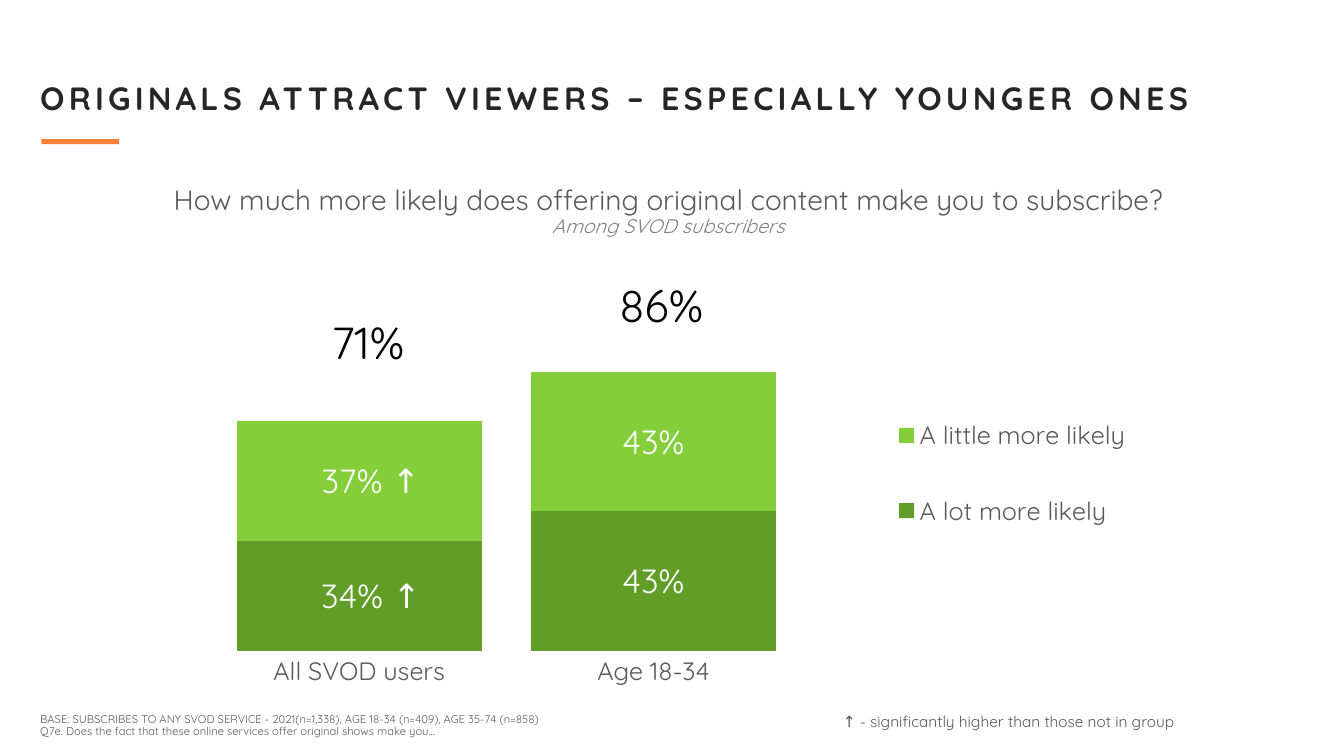
from dataclasses import dataclass, field
from typing import Any

from lxml import etree
from pptx import Presentation
from pptx import util as u
from pptx.chart import data as chart_data
from pptx.dml import color
from pptx.enum import chart as ch
from pptx.enum import shapes, text
from pptx.oxml import ns


@dataclass(frozen=True)
class Theme:
    font: str = "Quicksand"
    accent: str = "FF8139"
    heading: str = "262626"
    body: str = "595959"
    muted: str = "808080"
    total: str = "000000"
    label: str = "FFFFFF"
    lot: str = "629E27"
    little: str = "83CE39"
    title_size: float = 23
    question_size: float = 20
    base_size: float = 14
    total_size: float = 32
    label_size: float = 24
    axis_size: float = 18
    note_size: float = 11
    footer_size: float = 8


@dataclass(frozen=True)
class Cell:
    col: float
    row: float
    cols: float
    rows: float


@dataclass(frozen=True)
class Line:
    words: str
    size: float
    rgb: str
    fmt: dict[str, Any] = field(default_factory=dict)
    tracking: int = 0


@dataclass(frozen=True)
class Block:
    cell: Cell
    lines: list[Line]
    align: text.PP_ALIGN = text.PP_ALIGN.LEFT
    anchor: text.MSO_ANCHOR = text.MSO_ANCHOR.TOP
    spacing: float = 1.0


@dataclass(frozen=True)
class Answer:
    name: str
    values: tuple[float, ...]
    rgb: str
    label_shift: float


THEME = Theme()
GRID = 100
WIDTH, HEIGHT = u.Inches(13.33), u.Inches(7.5)
CENTER, RIGHT = text.PP_ALIGN.CENTER, text.PP_ALIGN.RIGHT
BOTTOM, MIDDLE = text.MSO_ANCHOR.BOTTOM, text.MSO_ANCHOR.MIDDLE

ACCENT_CELL = Cell(3.08, 18.4, 5.78, 0.67)
CHART_CELL = Cell(5.7, 36.8, 87.02, 54)
PLOT_SHARE = {"x": 0.116, "y": 0.119, "w": 0.503, "h": 0.8}
LEGEND_SHARE = {"x": 0.69, "y": 0.24, "w": 0.22, "h": 0.48}
GROUPS = ["All SVOD users", "Age 18-34"]
GROUP_FORMATS = ["0%\\ \\↑", "0%"]
ANSWERS = [
    Answer("A lot more likely", (0.34, 0.43), THEME.lot, 0.01),
    Answer("A little more likely", (0.37, 0.43), THEME.little, 0.01),
]

BLOCKS = [
    Block(Cell(2.25, 93.2, 95.42, 5.07), [
        Line("BASE: SUBSCRIBES TO ANY SVOD SERVICE - 2021(n=1,338), AGE 18-34 (n=409), AGE 35-74 (n=858)",
             THEME.footer_size, THEME.body),
        Line("Q7e. Does the fact that these online services offer original shows make you…",
             THEME.footer_size, THEME.body),
    ], anchor=BOTTOM, spacing=0.9),
    Block(Cell(3.75, 27.07, 91.97, 5.07), [
        Line("How much more likely does offering original content make you to subscribe?",
             THEME.question_size, THEME.body),
        Line("Among SVOD subscribers", THEME.base_size, THEME.muted, {"italic": True}),
    ], CENTER, BOTTOM, 0.9),
    Block(Cell(2.25, 6.93, 91.97, 11.47), [
        Line("ORIGINALS ATTRACT VIEWERS – ESPECIALLY YOUNGER ONES",
             THEME.title_size, THEME.heading, {"bold": True}, 300),
    ], anchor=MIDDLE, spacing=1.1),
    Block(Cell(56.26, 93.6, 31.88, 3.87), [
        Line("↑ - significantly higher than those not in group", THEME.note_size, THEME.body),
    ], RIGHT),
    Block(Cell(22.51, 40.93, 9.75, 8.53), [Line("71%", THEME.total_size, THEME.total)], CENTER),
    Block(Cell(44.34, 36.13, 9.75, 8.53), [Line("86%", THEME.total_size, THEME.total)], CENTER),
]


def place(cell: Cell) -> tuple[int, int, int, int]:
    return (int(WIDTH * cell.col / GRID), int(HEIGHT * cell.row / GRID),
            int(WIDTH * cell.cols / GRID), int(HEIGHT * cell.rows / GRID))


def set_all(target: Any, values: dict[str, Any]) -> None:
    for name, value in values.items():
        setattr(target, name, value)


def style_font(font: Any, size: float, rgb: str, **fmt: Any) -> None:
    set_all(font, {"name": THEME.font, "size": u.Pt(size), **fmt})
    font.color.rgb = color.RGBColor.from_string(rgb)


def fill_solid(fill: Any, rgb: str) -> None:
    fill.solid()
    fill.fore_color.rgb = color.RGBColor.from_string(rgb)


def draw_accent(s: Any) -> None:
    sp = s.shapes.add_shape(shapes.MSO_SHAPE.RECTANGLE, *place(ACCENT_CELL))
    sp.shadow.inherit = False
    fill_solid(sp.fill, THEME.accent)
    sp.line.fill.background()


def draw_block(s: Any, block: Block) -> None:
    tf = s.shapes.add_textbox(*place(block.cell)).text_frame
    set_all(tf, {"word_wrap": True, "vertical_anchor": block.anchor})
    for i, line in enumerate(block.lines):
        p = tf.add_paragraph() if i else tf.paragraphs[0]
        set_all(p, {"alignment": block.align, "line_spacing": block.spacing})
        r = p.add_run()
        r.text = line.words
        style_font(r.font, line.size, line.rgb, **line.fmt)
        if line.tracking:
            r.font._element.set("spc", str(line.tracking))


def make_layout(shares: dict[str, float], modes: dict[str, str]) -> Any:
    layout = etree.Element(ns.qn("c:layout"))
    manual = etree.SubElement(layout, ns.qn("c:manualLayout"))
    for tag, value in {**modes, **shares}.items():
        etree.SubElement(manual, ns.qn(f"c:{tag}")).set("val", str(value))
    return layout


def label_points(series: Any, answer: Answer) -> None:
    for i, number_format in enumerate(GROUP_FORMATS):
        style_font(series.points[i].data_label.font, THEME.label_size, THEME.label)
        idx = series._element.xpath(f"c:dLbls/c:dLbl/c:idx[@val='{i}']")[0]
        fmt = etree.Element(ns.qn("c:numFmt"), formatCode=number_format, sourceLinked="0")
        idx.addnext(fmt)
        if i == 0:
            idx.addnext(make_layout({"x": answer.label_shift, "y": 0}, {}))


def draw_chart(s: Any) -> None:
    data = chart_data.CategoryChartData(number_format="0%")
    data.categories = GROUPS
    for answer in ANSWERS:
        data.add_series(answer.name, answer.values)
    chart = s.shapes.add_chart(ch.XL_CHART_TYPE.COLUMN_STACKED, *place(CHART_CELL), data).chart
    set_all(chart, {"has_title": False, "has_legend": True})
    style_font(chart.font, THEME.axis_size, THEME.body)
    set_all(chart.legend, {"position": ch.XL_LEGEND_POSITION.RIGHT, "include_in_layout": False})
    style_font(chart.legend.font, THEME.axis_size, THEME.body)
    set_all(chart.value_axis, {"minimum_scale": 0, "maximum_scale": 1,
                               "has_major_gridlines": False, "visible": False})
    axis = chart.category_axis
    set_all(axis, {"major_tick_mark": ch.XL_TICK_MARK.NONE, "has_major_gridlines": False})
    axis.format.line.fill.background()
    style_font(axis.tick_labels.font, THEME.axis_size, THEME.body)
    plot = chart.plots[0]
    set_all(plot, {"gap_width": 20, "overlap": 100, "vary_by_categories": False})
    for series, answer in zip(plot.series, ANSWERS):
        fill_solid(series.format.fill, answer.rgb)
        label_points(series, answer)
    edges = {"xMode": "edge", "yMode": "edge"}
    area = chart._chartSpace.xpath("c:chart/c:plotArea")[0]
    for old in area.findall(ns.qn("c:layout")):
        area.remove(old)
    area.insert(0, make_layout(PLOT_SHARE, {"layoutTarget": "inner", **edges}))
    legend = chart.legend._element
    for old in legend.findall(ns.qn("c:layout")):
        legend.remove(old)
    legend.find(ns.qn("c:legendPos")).addnext(make_layout(LEGEND_SHARE, edges))


def main() -> None:
    prs = Presentation()
    set_all(prs, {"slide_width": WIDTH, "slide_height": HEIGHT})
    s = prs.slides.add_slide(prs.slide_layouts[6])
    draw_accent(s)
    draw_chart(s)
    for block in BLOCKS:
        draw_block(s, block)
    prs.save("out.pptx")


if __name__ == "__main__":
    main()
